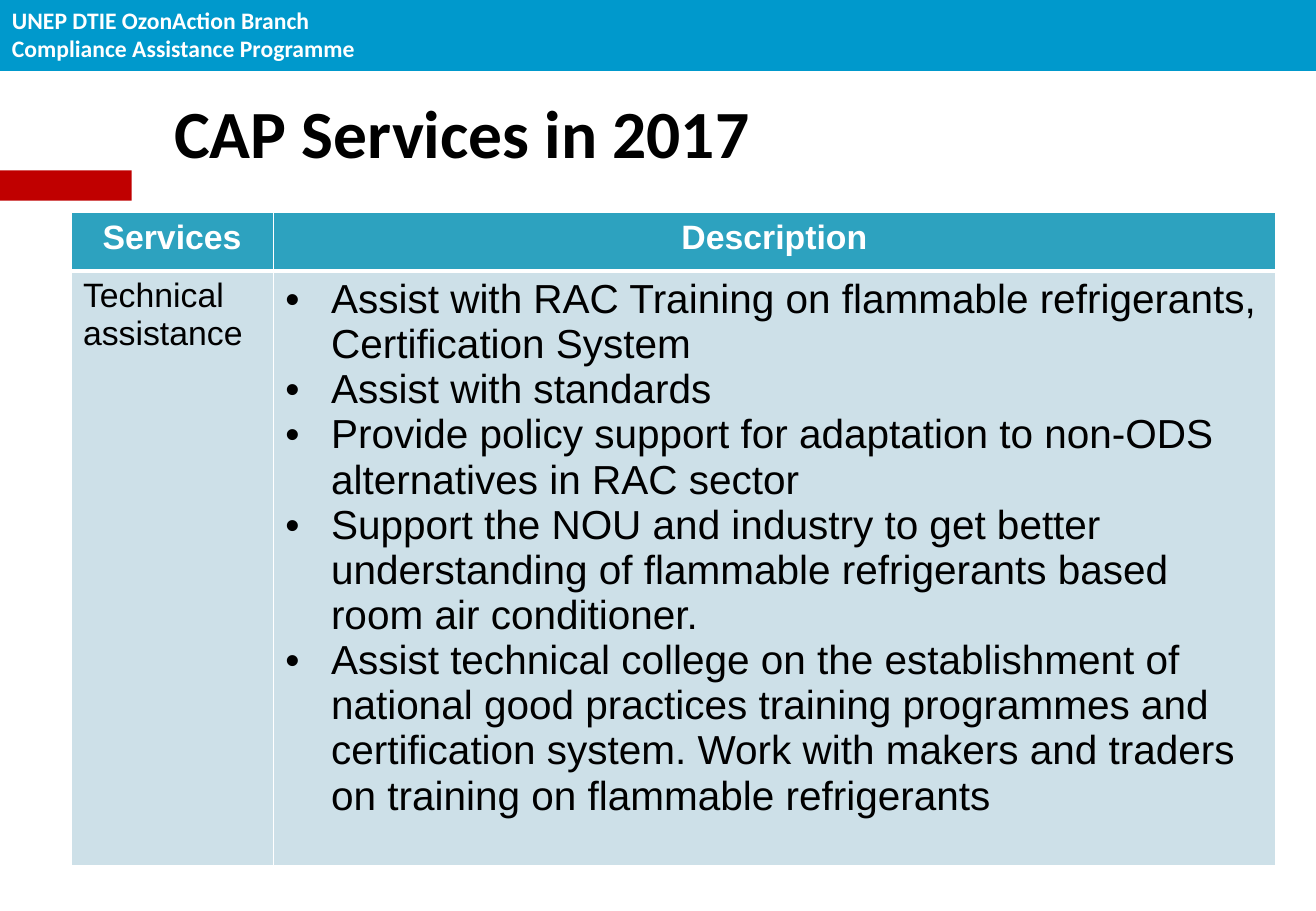
from lxml.etree import SubElement
from pptx import Presentation
from pptx.dml.color import RGBColor
from pptx.enum.shapes import MSO_SHAPE
from pptx.enum.text import MSO_ANCHOR, PP_ALIGN
from pptx.oxml.ns import qn
from pptx.util import Pt


def paint(fill, color):
    fill.solid()
    fill.fore_color.rgb = RGBColor.from_string(color)


def write(frame, lines, size, font="Arial", color="000000", bold=False,
          align=PP_ALIGN.LEFT, bullet=False):
    frame.word_wrap = True
    for i, line in enumerate(lines):
        para = frame.paragraphs[0] if i == 0 else frame.add_paragraph()
        para.alignment = align
        if bullet:
            props = para._p.get_or_add_pPr()
            props.set("marL", str(Pt(27)))
            props.set("indent", str(-Pt(27)))
            SubElement(props, qn("a:buFont"), typeface="Arial")
            SubElement(props, qn("a:buChar"), char="•")
        run = para.add_run()
        run.text = line
        run.font.name = font
        run.font.size = Pt(size)
        run.font.bold = bold
        paint(run.font.fill, color)


deck = Presentation()
deck.slide_width, deck.slide_height = Pt(780), Pt(540)
slide = deck.slides.add_slide(deck.slide_layouts[5])
shapes = slide.shapes

# Red tab and blue banner
for top, width, height, color in [(101, 78, 18, "C00000"), (0, 780, 42, "0099CC")]:
    bar = shapes.add_shape(MSO_SHAPE.RECTANGLE, 0, Pt(top), Pt(width), Pt(height))
    bar.shadow.inherit = False
    bar.line.fill.background()
    paint(bar.fill, color)

# Banner text
branch = shapes.add_textbox(0, 0, Pt(228), Pt(41))
write(branch.text_frame,
      ["UNEP DTIE OzonAction Branch", "Compliance Assistance Programme"],
      size=14, font="Calibri", color="FFFFFF", bold=True)

# Title
title = shapes.title
title.left, title.top, title.width, title.height = Pt(96), Pt(48), Pt(672), Pt(60)
title.text_frame.vertical_anchor = MSO_ANCHOR.MIDDLE
write(title.text_frame, ["CAP Services in 2017"], size=40, font="Calibri", bold=True)

# Services table
tasks = [
    "Assist with RAC Training on flammable refrigerants, Certification System",
    "Assist with standards",
    "Provide policy support for adaptation to non-ODS alternatives in RAC sector",
    "Support the NOU and industry to get better understanding of flammable "
    "refrigerants based room air conditioner.",
    "Assist technical college on the establishment of national good practices "
    "training programmes and certification system. Work with makers and traders "
    "on training on flammable refrigerants",
]
table = shapes.add_table(2, 2, Pt(42), Pt(126), Pt(714), Pt(363.5)).table
for col, width in zip(table.columns, [120, 594]):
    col.width = Pt(width)
for row, height in zip(table.rows, [34.5, 329]):
    row.height = Pt(height)

# Cell borders and fills
for r, color in enumerate(["2DA2BF", "CDE0E8"]):
    for cell in table.rows[r].cells:
        props = cell._tc.get_or_add_tcPr()
        for side in "LRTB":
            # A thick rule parts the header from the body
            thick = (r, side) in [(0, "B"), (1, "T")]
            edge = SubElement(props, qn("a:ln" + side), w=str(Pt(3 if thick else 1)))
            solid = SubElement(edge, qn("a:solidFill"))
            SubElement(solid, qn("a:srgbClr"), val="FFFFFF")
        paint(cell.fill, color)

# Cell text
for c, head in enumerate(["Services", "Description"]):
    write(table.cell(0, c).text_frame, [head], size=20, color="FFFFFF",
          bold=True, align=PP_ALIGN.CENTER)
write(table.cell(1, 0).text_frame, ["Technical assistance"], size=20)
write(table.cell(1, 1).text_frame, tasks, size=24, bullet=True)

deck.save("out.pptx")
